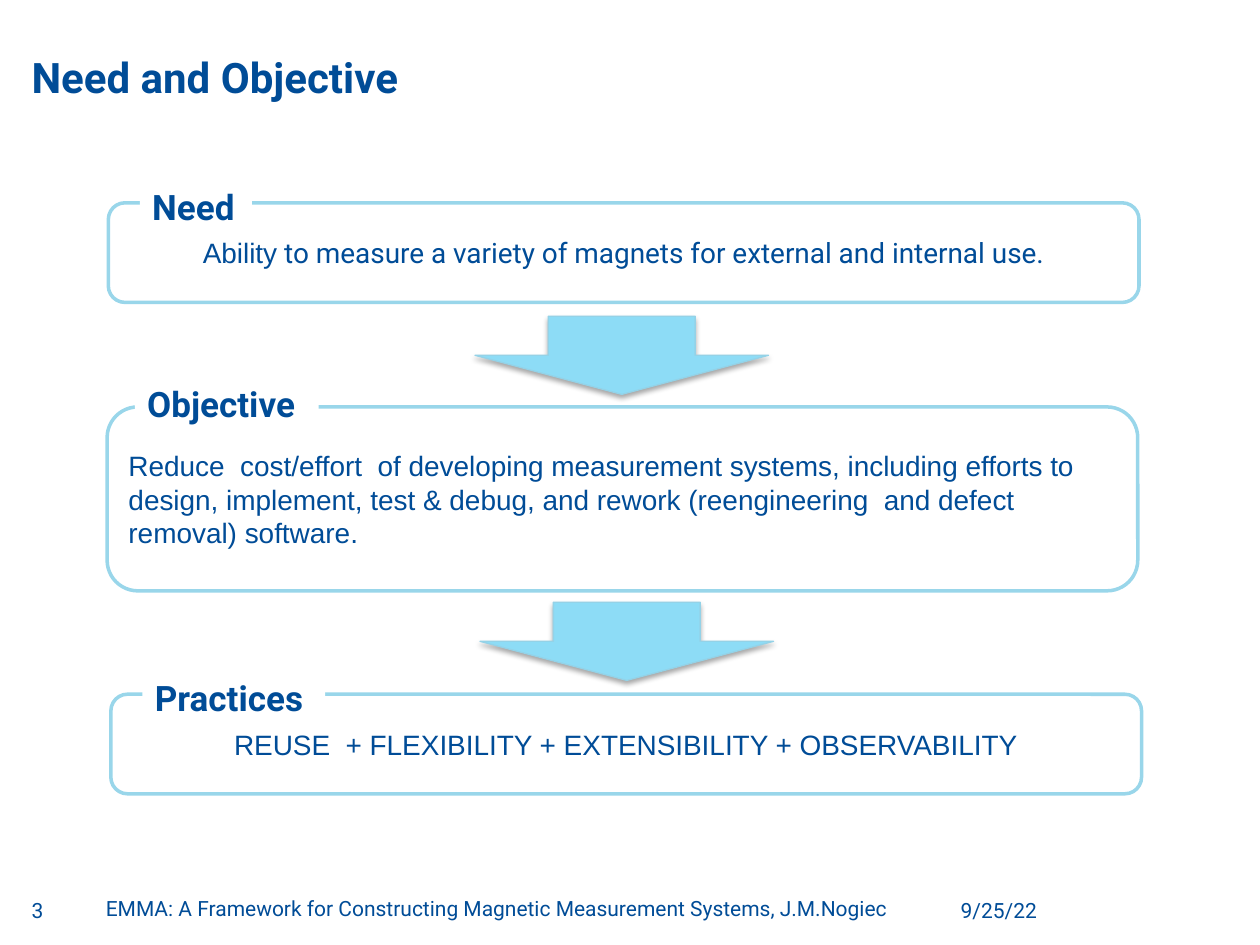
from lxml.etree import SubElement
from pptx import Presentation
from pptx.dml.color import RGBColor
from pptx.enum.shapes import MSO_SHAPE as Shape
from pptx.enum.text import MSO_ANCHOR as Anchor, MSO_AUTO_SIZE as AutoSize, PP_ALIGN as Align
from pptx.oxml.ns import qn
from pptx.util import Inches, Pt

NAVY, SKY, ARROW, ARROW_EDGE, WHITE = "004C97", "99D6EA", "8DDCF6", "94D2E7", "FFFFFF"
PANEL_WIDTH, SHORT_PANEL, TALL_PANEL, LABEL_HEIGHT = 8.18, 0.79, 1.46, 0.44
ARROW_WIDTH, ARROW_HEIGHT = 2.33, 0.62
FOOTER_HEIGHT = 0.26
TITLE = {"size": Pt(24), "bold": True, "name": "Roboto"}
LABEL = {"size": Pt(20), "bold": True, "name": "Roboto"}
BODY = {"size": Pt(16), "bold": False, "name": "Arial"}
FOOTER = {"size": Pt(12), "bold": False, "name": "Roboto"}
NO_MARGINS = dict.fromkeys(("margin_left", "margin_top", "margin_right", "margin_bottom"), 0)

PANELS = [
    ((0.86, 1.61, SHORT_PANEL), Align.CENTER,
     [("Ability", "Arial"),
      (" to measure a variety of magnets for external and internal use.", "Roboto")],
     (1.11, 1.42, 0.89), "Need"),
    ((0.85, 3.23, TALL_PANEL), Align.LEFT,
     [("Reduce  cost/effort  of developing measurement systems, including efforts to design, "
       "implement, test & debug, and rework (reengineering  and defect removal) software.", "Arial")],
     (1.07, 2.99, 1.46), "Objective"),
    ((0.88, 5.51, SHORT_PANEL), Align.CENTER,
     [("REUSE  + FLEXIBILITY + EXTENSIBILITY + OBSERVABILITY", "Arial")],
     (1.13, 5.32, 1.45), "Practices"),
]
ARROWS = [(3.77, 2.51), (3.81, 4.78)]
FOOTERS = [
    ((0.25, 7.12, 0.49), "3", Align.LEFT),
    ((0.84, 7.11, 6.6), "EMMA: A Framework for Constructing Magnetic Measurement Systems, J.M.Nogiec",
     Align.LEFT),
    ((7.05, 7.12, 1.18), "9/25/22", Align.RIGHT),
]


def color(value):
    """Turn a hex string into a colour."""
    return RGBColor.from_string(value)


def apply(target, values):
    """Set each attribute named in a dict."""
    for name, value in values.items():
        setattr(target, name, value)


def write(shape, runs, style, frame_format, align=Align.LEFT):
    """Write one paragraph of (text, font name) runs into a shape."""
    frame = shape.text_frame
    apply(frame, frame_format)
    paragraph = frame.paragraphs[0]
    paragraph.alignment = align
    for text, font_name in runs:
        run = paragraph.add_run()
        run.text = text
        apply(run.font, {**style, "name": font_name})
        run.font.color.rgb = color(NAVY)


def add_block(slide, kind, box, fill, line=None, weight=0):
    """Add a flat preset shape with an optional outline."""
    shape = slide.shapes.add_shape(kind, *map(Inches, box))
    shape.shadow.inherit = False
    shape.fill.solid()
    shape.fill.fore_color.rgb = color(fill)
    if line:
        shape.line.color.rgb = color(line)
        shape.line.width = Pt(weight)
    else:
        shape.line.fill.background()
    return shape


def add_title(slide, text):
    """Place and fill the title placeholder."""
    title = slide.shapes.title
    apply(title, {"left": Inches(0.25), "top": Inches(0.11),
                  "width": Inches(9.5), "height": Inches(0.7)})
    write(title, [(text, TITLE["name"])], TITLE,
          {**NO_MARGINS, "vertical_anchor": Anchor.BOTTOM, "auto_size": AutoSize.NONE})


def add_panel(slide, place, align, runs, label_place, label):
    """Add a rounded panel with a label that breaks its top edge."""
    left, top, height = place
    panel = add_block(slide, Shape.ROUNDED_RECTANGLE, (left, top, PANEL_WIDTH, height), WHITE, SKY, 2)
    write(panel, runs, BODY, {"vertical_anchor": Anchor.MIDDLE, "word_wrap": True}, align)
    tag = add_block(slide, Shape.RECTANGLE, (*label_place, LABEL_HEIGHT), WHITE)
    write(tag, [(label, LABEL["name"])], LABEL,
          {"vertical_anchor": Anchor.TOP, "word_wrap": False,
           "auto_size": AutoSize.SHAPE_TO_FIT_TEXT})


def add_arrow(slide, left, top):
    """Add a down arrow with a soft shadow below it."""
    arrow = add_block(slide, Shape.DOWN_ARROW, (left, top, ARROW_WIDTH, ARROW_HEIGHT),
                      ARROW, ARROW_EDGE, 0.75)
    effects = arrow._element.spPr.find(qn("a:effectLst"))
    shadow = SubElement(effects, qn("a:outerShdw"), blurRad=str(Pt(3.1)), dist=str(Pt(1.8)),
                        dir="5400000", rotWithShape="0")
    tint = SubElement(shadow, qn("a:srgbClr"), val="000000")
    SubElement(tint, qn("a:alpha"), val="35000")


def add_footer(slide, place, text, align):
    """Add one footer text box."""
    box = slide.shapes.add_textbox(*map(Inches, (*place, FOOTER_HEIGHT)))
    write(box, [(text, FOOTER["name"])], FOOTER, {**NO_MARGINS, "word_wrap": True}, align)


def main():
    """Build and save the slide."""
    presentation = Presentation()
    presentation.slide_width, presentation.slide_height = Inches(10), Inches(7.5)
    slide = presentation.slides.add_slide(presentation.slide_layouts[5])
    add_title(slide, "Need and Objective")
    for footer in FOOTERS:
        add_footer(slide, *footer)
    for panel in PANELS:
        add_panel(slide, *panel)
    for arrow in ARROWS:
        add_arrow(slide, *arrow)
    presentation.save("out.pptx")


if __name__ == "__main__":
    main()
